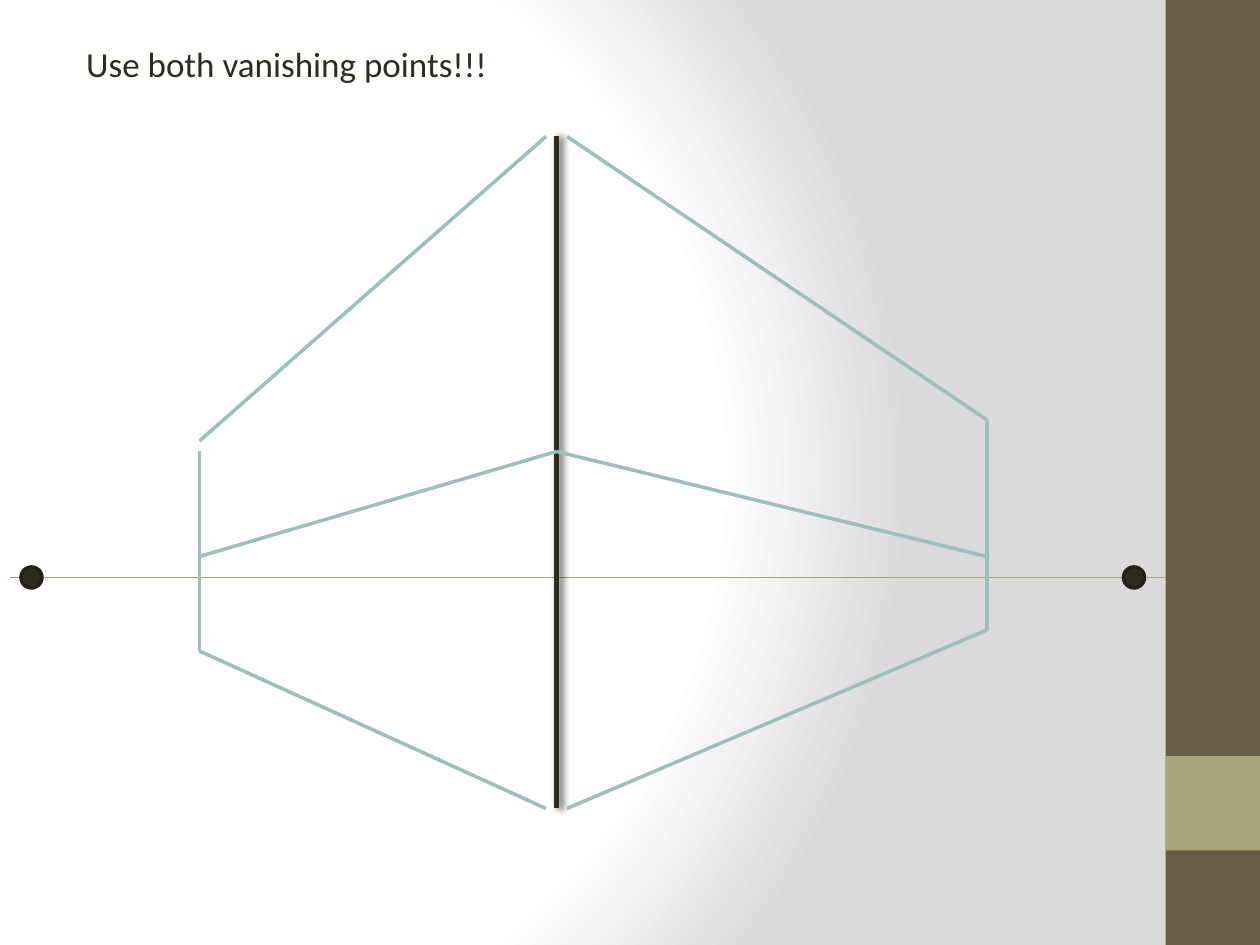
from dataclasses import dataclass

from pptx import Presentation
from pptx import util as u
from pptx.dml.color import RGBColor
from pptx.enum import shapes, text
from pptx.oxml import parse_xml
from pptx.oxml.ns import nsdecls

PX = 7620  # EMU per px: 120 px to the inch


@dataclass(frozen=True)
class Theme:
    paper: str = "FFFFFF"
    shade: str = "DADADA"
    band: str = "675E47"
    accent: str = "A9A57C"
    horizon: str = "A6A278"
    ink: str = "2F2B20"
    rim: str = "232018"
    edge: str = "9CBEBD"
    shadow: str = "000000"
    font: str = "Calibri"
    title_size: int = 20


THEME = Theme()


def px(*lengths):
    return [u.Emu(length * PX) for length in lengths]


def apply(target, **values):
    for name, value in values.items():
        setattr(target, name, value)


def paint(fill, color):
    fill.solid()
    fill.fore_color.rgb = RGBColor.from_string(color)


def add_block(page, kind, box, color, rim=None):
    block = page.shapes.add_shape(kind, *px(*box))
    block.shadow.inherit = False
    paint(block.fill, color)
    if rim:
        paint(block.line.fill, rim)
        block.line.width = u.Pt(2)
    else:
        block.line.fill.background()


def add_line(page, start, end, color, width, effect=""):
    line = page.shapes.add_connector(shapes.MSO_CONNECTOR.STRAIGHT, *px(*start, *end))
    paint(line.line.fill, color)
    line.line.width = u.Pt(width)
    line._element.spPr.append(
        parse_xml(f"<a:effectLst {nsdecls('a')}>{effect}</a:effectLst>"))


def set_background(page):
    """Radial fade from white on the left to grey on the right."""
    stops = "".join(
        f'<a:gs pos="{share * 1000}"><a:srgbClr val="{color}"/></a:gs>'
        for share, color in ((0, THEME.paper), (75, THEME.paper), (100, THEME.shade)))
    page._element.cSld.insert(0, parse_xml(
        f"<p:bg {nsdecls('p', 'a')}><p:bgPr><a:gradFill rotWithShape='1'>"
        f"<a:gsLst>{stops}</a:gsLst><a:path path='circle'>"
        "<a:fillToRect l='20000' t='50000' r='100000' b='50000'/></a:path>"
        "</a:gradFill><a:effectLst/></p:bgPr></p:bg>"))


def add_side_band(page, box):
    left, top, width, height = box
    add_block(page, shapes.MSO_SHAPE.RECTANGLE, box, THEME.band)
    # Square accent, one width above the foot of the band
    add_block(page, shapes.MSO_SHAPE.RECTANGLE,
              (left, top + height - 2 * width, width, width), THEME.accent)


def add_title(page, box, words):
    title = page.shapes.title
    apply(title, **dict(zip(("left", "top", "width", "height"), px(*box))))
    frame = title.text_frame
    apply(frame, word_wrap=False, auto_size=text.MSO_AUTO_SIZE.SHAPE_TO_FIT_TEXT,
          vertical_anchor=text.MSO_ANCHOR.TOP)
    para = frame.paragraphs[0]
    para.alignment = text.PP_ALIGN.LEFT
    span = para.add_run()
    span.text = words
    apply(span.font, name=THEME.font, size=u.Pt(THEME.title_size))
    span.font.color.rgb = RGBColor.from_string(THEME.ink)


def add_horizon(page, box):
    """Horizon through the middle of the box, with both vanishing points."""
    left, top, width, height = box
    middle = top + height // 2
    add_line(page, (left, middle), (left + width, middle), THEME.horizon, 1)
    for offset in (10, width - 40):
        add_block(page, shapes.MSO_SHAPE.OVAL, (left + offset, top, height, height),
                  THEME.ink, THEME.rim)


def add_building(page, box):
    """Near corner and the two walls that recede from it."""
    left, top, width, height = box
    corner, gap = 340, 10

    def draw(start, end, color=THEME.edge, weight=2, effect=""):
        add_line(page, (left + start[0], top + start[1]),
                 (left + end[0], top + end[1]), color, weight, effect)

    # Near corner with a soft shadow to its right
    draw((corner, 0), (corner, height), THEME.ink, 3,
         f'<a:outerShdw blurRad="{u.Pt(4)}" dist="{u.Pt(2)}" dir="0" rotWithShape="0">'
         f'<a:srgbClr val="{THEME.shadow}"><a:alpha val="60000"/></a:srgbClr></a:outerShdw>')

    # Each wall: far edge, its side, roof end, top and foot of the far edge
    for far, side, roof, far_top, foot in ((width, 1, 270, 270, 470),
                                           (0, -1, 290, 300, 490)):
        near = corner + side * gap
        draw((near, 0), (far, roof))
        draw((near, height), (far, foot))
        draw((far, far_top), (far, foot))
        draw((corner, 300), (far, 400))


def build_slide(deck):
    page = deck.slides.add_slide(deck.slide_layouts[5])
    set_background(page)
    add_side_band(page, (1110, 0, 90, 900))
    add_horizon(page, (10, 540, 1100, 20))
    add_building(page, (190, 130, 750, 640))
    add_title(page, (70, 34, 409, 53), "Use both vanishing points!!!")


def main():
    deck = Presentation()
    deck.slide_width, deck.slide_height = px(1200, 900)
    build_slide(deck)
    deck.save("out.pptx")


if __name__ == "__main__":
    main()
